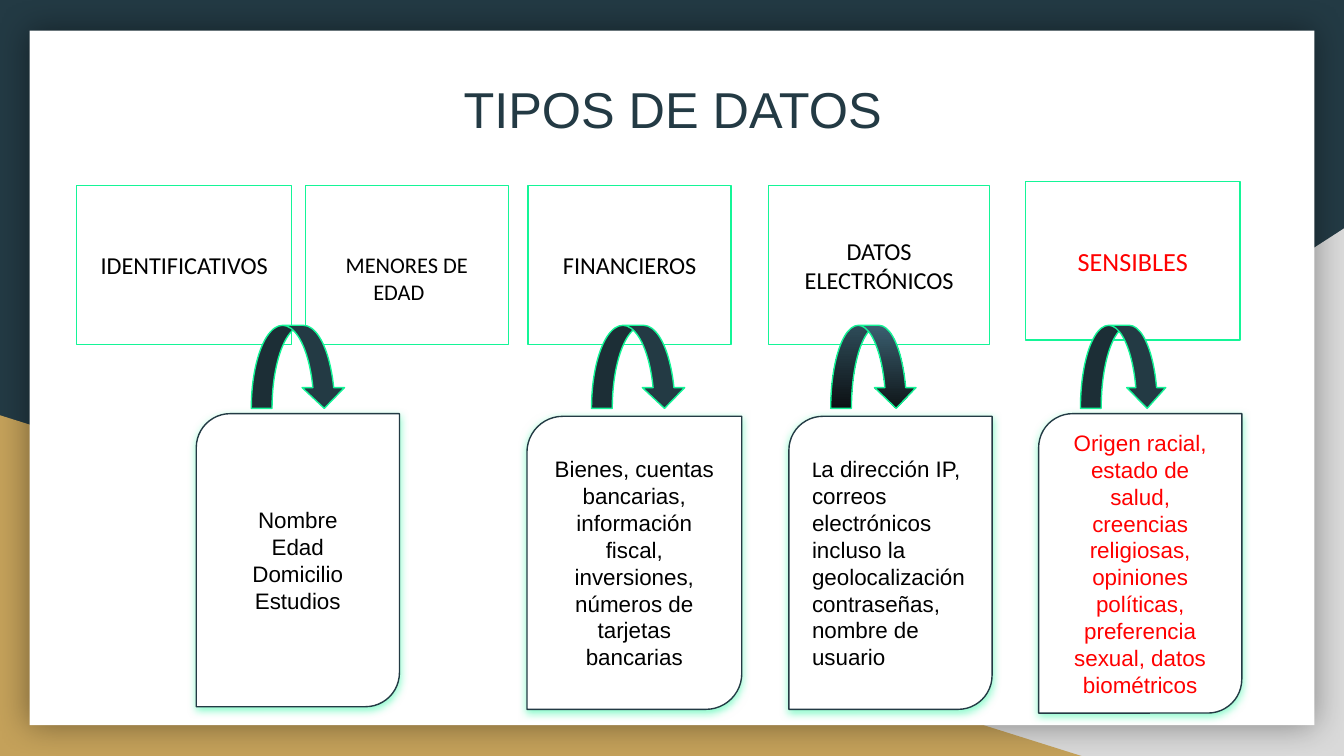
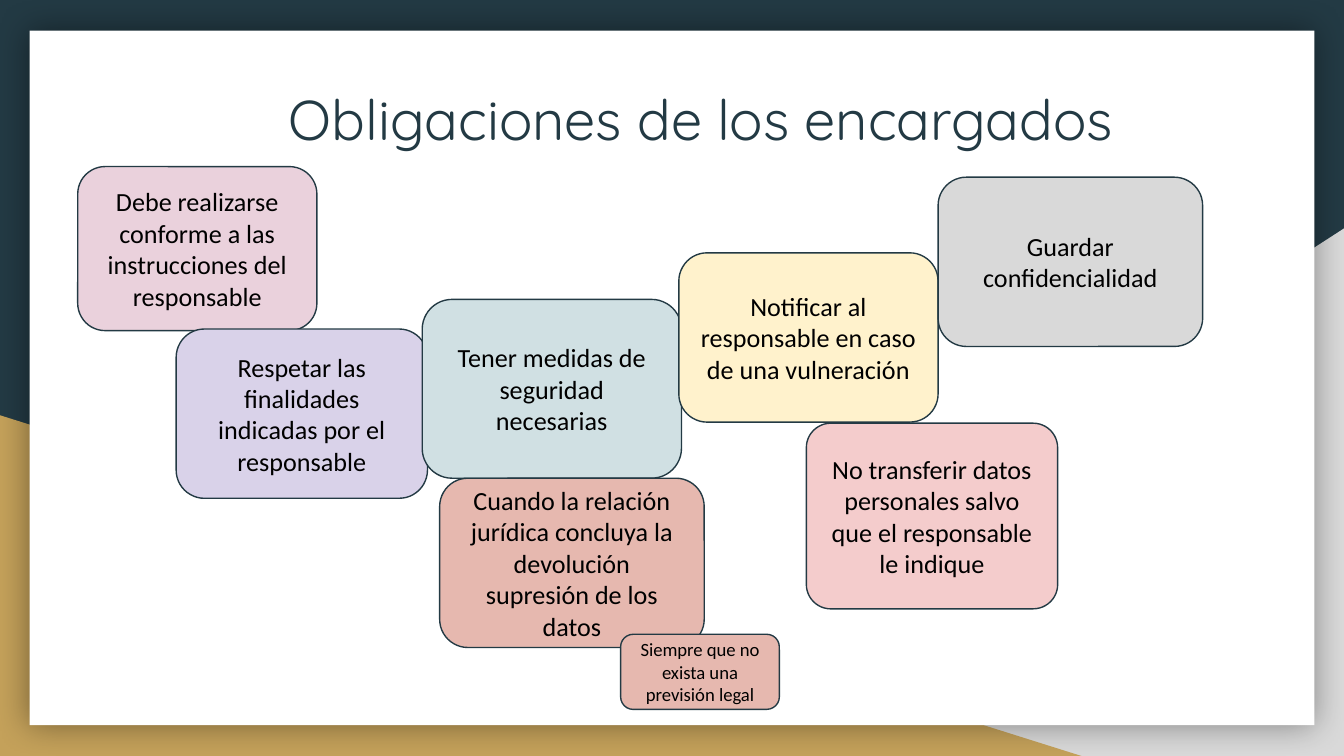
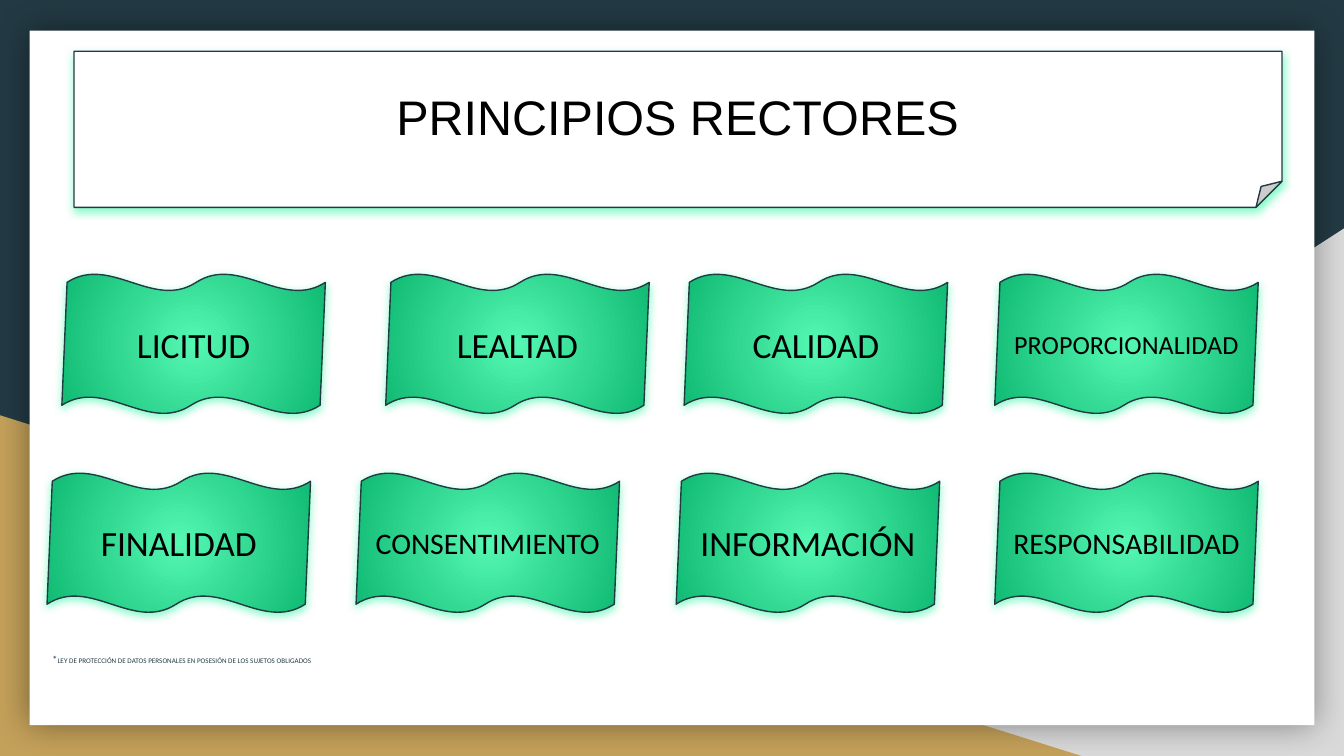
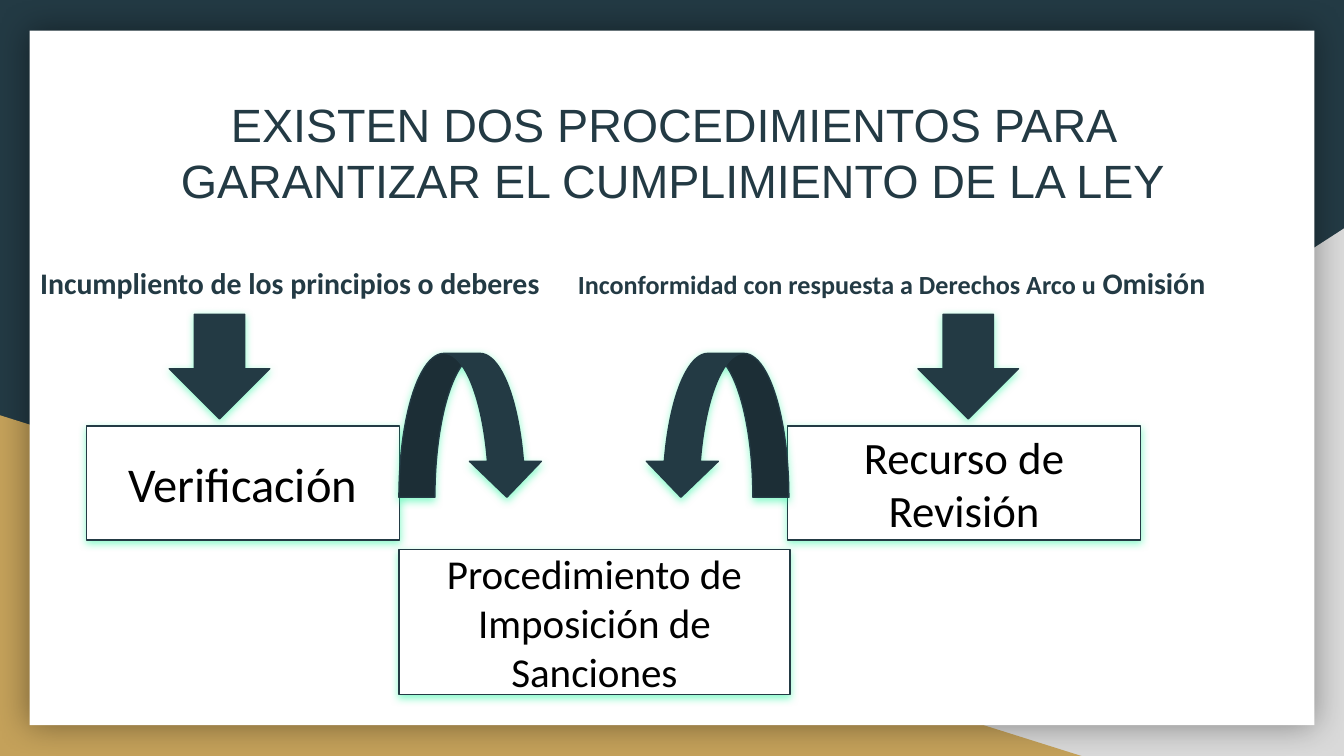
from dataclasses import dataclass

from lxml.etree import SubElement
from pptx import Presentation
from pptx.dml.color import RGBColor
from pptx.enum.shapes import MSO_SHAPE
from pptx.enum.text import MSO_ANCHOR, MSO_AUTO_SIZE, PP_ALIGN
from pptx.oxml.ns import qn
from pptx.util import Cm, Pt


@dataclass(frozen=True)
class Theme:
    navy: str = "233A44"
    gold: str = "C4A15A"
    gray: str = "D9D9D9"
    white: str = "FFFFFF"
    black: str = "000000"
    red: str = "FF0000"
    mint: str = "14F597"
    steel: tuple = ("3A5F70", "0F1518")
    emerald: tuple = ("54F8B3", "10B972")
    pink: str = "EAD1DC"
    lilac: str = "D9D2E9"
    aqua: str = "D0E0E3"
    cream: str = "FFF2CC"
    rose: str = "F4CCCC"
    clay: str = "E6B8AF"
    sans: str = "Arial"
    text: str = "Calibri"
    display: str = "Quicksand"
    line: float = 0.75
    note: float = 3.8
    note_mark: float = 5.5
    tiny: float = 10
    small: float = 12
    label: float = 13
    body: float = 14
    lead: float = 16
    wave: float = 19
    sanction: float = 22
    review: float = 24
    long_title: float = 25
    heading: float = 26
    title: float = 27
    big_title: float = 30


T = Theme()
GLOW = dict(color=T.mint, alpha=50, blur=4.5, dist=1.5, angle=90)
PAGE_SHADOW = dict(color=T.black, alpha=40, blur=18, dist=0, angle=0)


def rgb(value):
    return RGBColor.from_string(value)


def apply(obj, **values):
    for name, value in values.items():
        setattr(obj, name, value)


def place(sp, box):
    apply(sp, **dict(zip(("left", "top", "width", "height"), map(Cm, box))))


def set_fill(sp, fill):
    """Fill with one colour, or with a (start, end) pair running downwards."""
    if isinstance(fill, str):
        sp.fill.solid()
        sp.fill.fore_color.rgb = rgb(fill)
        return
    sp.fill.gradient()
    sp.fill.gradient_angle = 270
    for stop, color in zip(sp.fill.gradient_stops, fill):
        stop.color.rgb = rgb(color)


def make_radial(sp):
    grad = sp.element.spPr.find(qn("a:gradFill"))
    grad.remove(grad.find(qn("a:lin")))
    centre = SubElement(SubElement(grad, qn("a:path"), path="circle"), qn("a:fillToRect"))
    for side in "ltrb":
        centre.set(side, "50000")


def set_adjustments(sp, values):
    """Write the guides as XML, since python-pptx lists none for some presets."""
    guides = sp.element.spPr.find(qn("a:prstGeom")).find(qn("a:avLst"))
    for guide in list(guides):
        guides.remove(guide)
    for i, value in enumerate(values, 1):
        name = "adj" if len(values) == 1 else f"adj{i}"
        SubElement(guides, qn("a:gd"), name=name, fmla=f"val {round(value * 100000)}")


def add_shadow(sp, color, alpha, blur, dist, angle):
    effects = sp.element.spPr.find(qn("a:effectLst"))
    outer = SubElement(effects, qn("a:outerShdw"), blurRad=str(Pt(blur)), dist=str(Pt(dist)),
                       dir=str(angle * 60000), algn="bl", rotWithShape="0")
    clr = SubElement(outer, qn("a:srgbClr"), val=color)
    SubElement(clr, qn("a:alpha"), val=str(alpha * 1000))


def write(tf, paragraphs, size, font=T.text, color=T.black, align=PP_ALIGN.CENTER,
          bold=False, **spacing):
    """Write paragraphs; each is a string or a list of (text, font overrides) runs."""
    apply(tf, word_wrap=True, auto_size=MSO_AUTO_SIZE.NONE)
    apply(tf, **{f"margin_{side}": Cm(0.25) for side in ("left", "right", "top", "bottom")})
    for i, runs in enumerate(paragraphs):
        p = tf.add_paragraph() if i else tf.paragraphs[0]
        apply(p, alignment=align, **spacing)
        for text, own in [(runs, {})] if isinstance(runs, str) else runs:
            r = p.add_run()
            r.text = text
            apply(r.font, **{"name": font, "size": Pt(size), "bold": bold, **own})
            r.font.color.rgb = rgb(color)


def add_shape(slide, kind, box, fill=T.white, line=T.navy, adj=(), shadow=None, flip=False):
    sp = slide.shapes.add_shape(kind, *map(Cm, box))
    sp.shadow.inherit = False
    set_fill(sp, fill)
    if line:
        sp.line.color.rgb = rgb(line)
        sp.line.width = Pt(T.line)
    else:
        sp.line.fill.background()
    if adj:
        set_adjustments(sp, adj)
    if shadow:
        add_shadow(sp, **shadow)
    if flip:
        sp.element.spPr.find(qn("a:xfrm")).set("flipH", "1")
    return sp


def add_box(slide, kind, box, paragraphs, size, look=None, **style):
    sp = add_shape(slide, kind, box, **(look or {}))
    sp.text_frame.vertical_anchor = MSO_ANCHOR.MIDDLE
    write(sp.text_frame, paragraphs, size, **style)
    return sp


def add_title(slide, text, box, size, font=T.sans, align=PP_ALIGN.CENTER, indent=0):
    sp = slide.shapes.title
    place(sp, box)
    sp.text_frame.vertical_anchor = MSO_ANCHOR.TOP
    write(sp.text_frame, [text], size, font=font, color=T.navy, align=align)
    sp.text_frame.paragraphs[0]._p.get_or_add_pPr().set("marL", str(Cm(indent)))


def add_body(slide, runs, box, size, tab=None, **style):
    """Fill the body with one unbulleted paragraph, with an optional tab stop."""
    sp = slide.placeholders[1]
    place(sp, box)
    write(sp.text_frame, [runs], size, color=T.navy, space_before=Pt(0), **style)
    pPr = sp.text_frame.paragraphs[0]._p.get_or_add_pPr()
    pPr.set("marL", "0")
    pPr.set("indent", "0")
    SubElement(pPr, qn("a:buNone"))
    if tab:
        SubElement(SubElement(pPr, qn("a:tabLst")), qn("a:tab"), pos=str(Cm(tab)), algn="l")


def remove_empty_placeholders(slide):
    for sp in list(slide.placeholders):
        if not sp.text_frame.text:
            sp.element.getparent().remove(sp.element)


def build_master(prs, slide):
    """Move the shared frame, drawn on a slide, behind everything in the master."""
    master = prs.slide_master
    master.background.fill.solid()
    master.background.fill.fore_color.rgb = rgb(T.navy)
    frame = [
        add_shape(slide, MSO_SHAPE.RIGHT_TRIANGLE, (9.96, 4.32, 15.44, 9.98), T.gray, None,
                  flip=True),
        add_shape(slide, MSO_SHAPE.RIGHT_TRIANGLE, (0, 7.85, 20.47, 6.45), T.gold, None),
        add_shape(slide, MSO_SHAPE.RECTANGLE, (0.56, 0.58, 24.28, 13.13), T.white, None,
                  shadow=PAGE_SHADOW),
    ]
    for i, sp in enumerate(frame):
        master.shapes.element.insert(2 + i, sp.element)


def build_data_types(slide):
    add_title(slide, "TIPOS DE DATOS", (2.29, 1.22, 20.85, 2.64), T.title)
    for x, y, w, lines, size, color in [
        (1.45, 3.51, 4.06, ["IDENTIFICATIVOS"], T.label, T.black),
        (5.77, 3.51, 3.84, ["MENORES DE EDAD\t"], T.small, T.black),
        (9.98, 3.51, 3.84, ["FINANCIEROS"], T.label, T.black),
        (14.53, 3.51, 4.17, ["DATOS", "ELECTRÓNICOS"], T.label, T.black),
        (19.38, 3.43, 4.06, ["SENSIBLES"], T.body, T.red),
    ]:
        sp = add_box(slide, MSO_SHAPE.RECTANGLE, (x, y, w, 3), lines, size,
                     look=dict(line=T.mint), color=color)
        if size == T.small:
            sp.text_frame.margin_top = Cm(0.75)

    for x, w, bend, fill in [
        (4.75, 1.78, 0.51, T.navy),
        (11.18, 1.78, 0.51, T.navy),
        (15.7, 1.63, 0.5, T.steel),
        (20.42, 1.63, 0.47, T.navy),
    ]:
        add_shape(slide, MSO_SHAPE.CURVED_DOWN_ARROW, (x, 6.15, w, 1.57), fill, T.mint,
                  (0.25, bend, 0.25))

    electronic = [("L", {"name": T.text}),
                  ("a dirección IP, correos electrónicos incluso la geolocalización "
                   "contraseñas, nombre de usuario", {})]
    for box, lines, style in [
        ((3.71, 7.82, 3.84, 5.54), ["Nombre", "Edad", "Domicilio", "Estudios"], {}),
        ((9.96, 7.87, 4.06, 5.54),
         ["Bienes, cuentas bancarias, información fiscal, inversiones, números de tarjetas "
          "bancarias"], {}),
        ((14.91, 7.87, 3.84, 5.54), [electronic], {"align": PP_ALIGN.LEFT}),
        ((19.63, 7.82, 3.84, 5.66),
         ["Origen racial, estado de salud, creencias religiosas, opiniones políticas, "
          "preferencia sexual, datos biométricos"], {"color": T.red}),
    ]:
        add_box(slide, MSO_SHAPE.ROUND_2_DIAG_RECTANGLE, box, lines, T.small,
                look=dict(adj=(0.167, 0), shadow=GLOW), font=T.sans, **style)


def build_duties(slide):
    add_title(slide, "Obligaciones de los encargados", (2.67, 1.35, 20.85, 3.38), T.big_title,
              font=T.display, align=PP_ALIGN.LEFT, indent=2.54)
    for box, fill, text, size, corner in [
        ((1.47, 3.15, 4.52, 3.1), T.pink,
         "Debe realizarse conforme a las instrucciones del responsable", T.body, 0.167),
        ((3.33, 6.22, 4.75, 3.2), T.lilac,
         "Respetar las finalidades indicadas por el responsable", T.body, 0.167),
        ((7.98, 5.66, 4.9, 3.38), T.aqua,
         "Tener medidas de seguridad necesarias", T.body, 0.167),
        ((12.83, 4.78, 4.9, 3.2), T.cream,
         "Notificar al responsable en caso de una vulneración", T.body, 0.167),
        ((15.24, 8, 4.75, 3.51), T.rose,
         "No transferir datos personales salvo que el responsable le indique", T.body, 0.132),
        ((17.73, 3.35, 5, 3.2), T.gray, "Guardar confidencialidad", T.body, 0.167),
        ((8.31, 9.04, 5, 3.2), T.clay,
         "Cuando la relación jurídica concluya la devolución supresión de los datos",
         T.body, 0.167),
        ((11.73, 11.99, 3, 1.42), T.clay,
         "Siempre que no exista una previsión legal", T.tiny, 0.167),
    ]:
        add_box(slide, MSO_SHAPE.ROUNDED_RECTANGLE, box, [text], size,
                look=dict(fill=fill, adj=(corner,)))


def build_principles(slide):
    add_body(slide, [("*", {"size": Pt(T.note_mark)}),
                     ("LEY DE PROTECCIÓN DE DATOS PERSONALES EN POSESIÓN DE LOS SUJETOS "
                      "OBLIGADOS", {})],
             (0.74, 12.12, 22.28, 0.7), T.note, align=PP_ALIGN.JUSTIFY, line_spacing=0.95)
    add_box(slide, MSO_SHAPE.FOLDED_CORNER, (1.4, 0.97, 22.83, 2.95), ["PRINCIPIOS RECTORES"],
            T.heading, look=dict(adj=(0.167,), shadow=GLOW), font=T.sans)
    rows = [
        (5.18, [(1.17, "LICITUD", T.wave), (7.29, "LEALTAD", T.wave),
                (12.93, "CALIDAD", T.wave), (18.8, "PROPORCIONALIDAD", T.body)]),
        (8.94, [(0.89, "FINALIDAD", T.wave), (6.73, "CONSENTIMIENTO", T.lead),
                (12.78, "INFORMACIÓN", T.wave), (18.8, "RESPONSABILIDAD", T.lead)]),
    ]
    for y, waves in rows:
        for x, text, size in waves:
            sp = add_box(slide, MSO_SHAPE.DOUBLE_WAVE, (x, y, 4.98, 2.64), [text], size,
                         look=dict(fill=T.emerald, adj=(0.06, -0.01), shadow=GLOW))
            make_radial(sp)


def build_procedures(slide):
    add_title(slide, "EXISTEN DOS PROCEDIMIENTOS PARA GARANTIZAR EL CUMPLIMIENTO DE LA LEY",
              (2.29, 1.57, 20.85, 2.34), T.long_title)
    add_body(slide, [("Incumpliento de los principios o deberes\t", {}),
                     ("Inconformidad con respuesta a Derechos Arco u ", {"size": Pt(T.body)}),
                     ("Omisión", {})],
             (0.51, 4.65, 23.88, 6.81), T.lead, tab=11.43, align=PP_ALIGN.LEFT, bold=True,
             line_spacing=1.15)
    for x in (3.2, 17.35):
        add_shape(slide, MSO_SHAPE.DOWN_ARROW, (x, 5.94, 1.9, 1.98), T.navy, shadow=GLOW)
    for box, text, size in [
        ((1.63, 8.05, 5.92, 2.16), "Verificación", T.heading),
        ((14.88, 8.05, 6.68, 2.16), "Recurso de Revisión", T.review),
        ((7.54, 10.39, 7.39, 2.74), "Procedimiento de Imposición de Sanciones", T.sanction),
    ]:
        add_box(slide, MSO_SHAPE.RECTANGLE, box, [text], size, look=dict(shadow=GLOW))
    for x, flip in ((7.54, False), (12.19, True)):
        add_shape(slide, MSO_SHAPE.CURVED_DOWN_ARROW, (x, 6.68, 2.72, 2.72), T.navy,
                  adj=(0.25, 0.5, 0.25), shadow=GLOW, flip=flip)


def main():
    prs = Presentation()
    apply(prs, slide_width=Cm(25.4), slide_height=Cm(14.29))
    layout = prs.slide_layouts.get_by_name("Title and Content")
    builders = (build_data_types, build_duties, build_principles, build_procedures)
    for i, build in enumerate(builders):
        slide = prs.slides.add_slide(layout)
        if i == 0:
            build_master(prs, slide)
        build(slide)
        remove_empty_placeholders(slide)
    prs.save("out.pptx")


if __name__ == "__main__":
    main()
